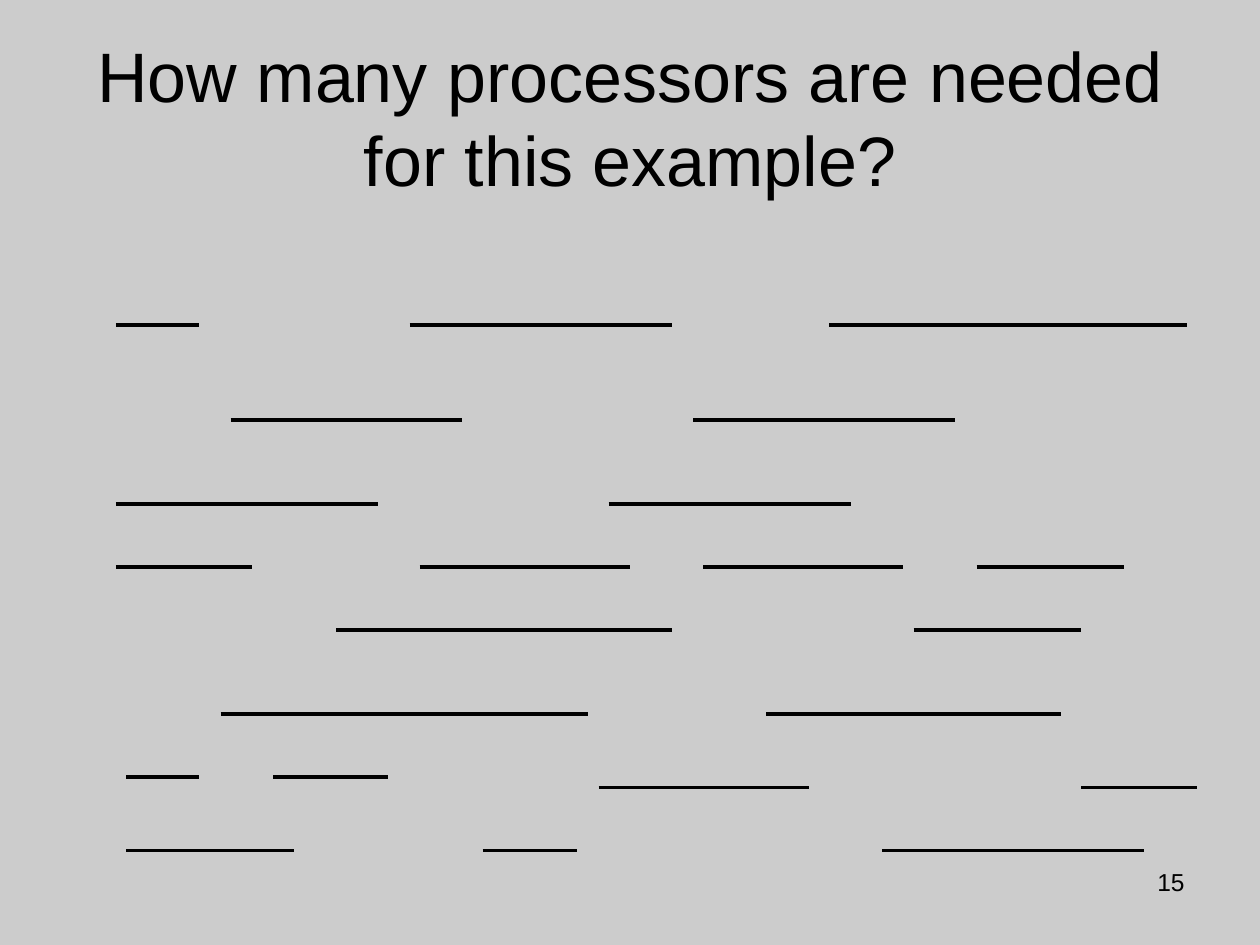
from pptx import Presentation
from pptx.dml.color import RGBColor
from pptx.enum.shapes import MSO_CONNECTOR
from pptx.enum.text import MSO_ANCHOR, PP_ALIGN
from pptx.oxml.ns import qn
from pptx.util import Inches, Pt
from lxml.etree import SubElement

TITLE = "How many processors are needed for this example?"
PAGE = "15"
BACKGROUND, INK = "CCCCCC", "000000"
JOBS = {
    2.58: [(0.92, 1.58), (3.25, 5.33), (6.58, 9.42)],
    3.33: [(1.83, 3.67), (5.5, 7.58)],
    4: [(0.92, 3), (4.83, 6.75)],
    4.5: [(0.92, 2), (3.33, 5), (5.58, 7.17), (7.75, 8.92)],
    5: [(2.67, 5.33), (7.25, 8.58)],
    5.67: [(1.75, 4.67), (6.08, 8.42)],
    6.17: [(1, 1.58), (2.17, 3.08)],
    6.25: [(4.75, 6.42), (8.58, 9.5)],
    6.75: [(1, 2.33), (3.83, 4.58), (7, 9.08)],
}


def color(target, value):
    target.rgb = RGBColor.from_string(value)


def write(sp, text, size, align, anchor):
    tf = sp.text_frame
    tf.text = text
    tf.word_wrap = True
    tf.vertical_anchor = anchor
    p = tf.paragraphs[0]
    p.alignment = align
    font = p.runs[0].font
    font.name, font.size = "Arial", Pt(size)
    color(font.color, INK)


def add_job(slide, start, end, y):
    line = slide.shapes.add_connector(
        MSO_CONNECTOR.STRAIGHT, Inches(start), Inches(y), Inches(end), Inches(y))
    line.line.width = Pt(2.25)
    color(line.line.color, INK)
    SubElement(line._element.spPr, qn("a:effectLst"))


def main():
    prs = Presentation()
    prs.slide_width, prs.slide_height = Inches(10), Inches(7.5)
    slide = prs.slides.add_slide(prs.slide_layouts[5])
    fill = slide.background.fill
    fill.solid()
    color(fill.fore_color, BACKGROUND)

    title = slide.shapes.title
    title.left, title.top = Inches(0.5), Inches(0.3)
    title.width, title.height = Inches(9), Inches(1.25)
    write(title, TITLE, 40, PP_ALIGN.CENTER, MSO_ANCHOR.MIDDLE)

    for y, spans in JOBS.items():
        for start, end in spans:
            add_job(slide, start, end, y)

    number = slide.shapes.add_textbox(
        Inches(7.17), Inches(6.83), Inches(2.33), Inches(0.52))
    write(number, PAGE, 14, PP_ALIGN.RIGHT, MSO_ANCHOR.TOP)
    prs.save("out.pptx")


if __name__ == "__main__":
    main()
